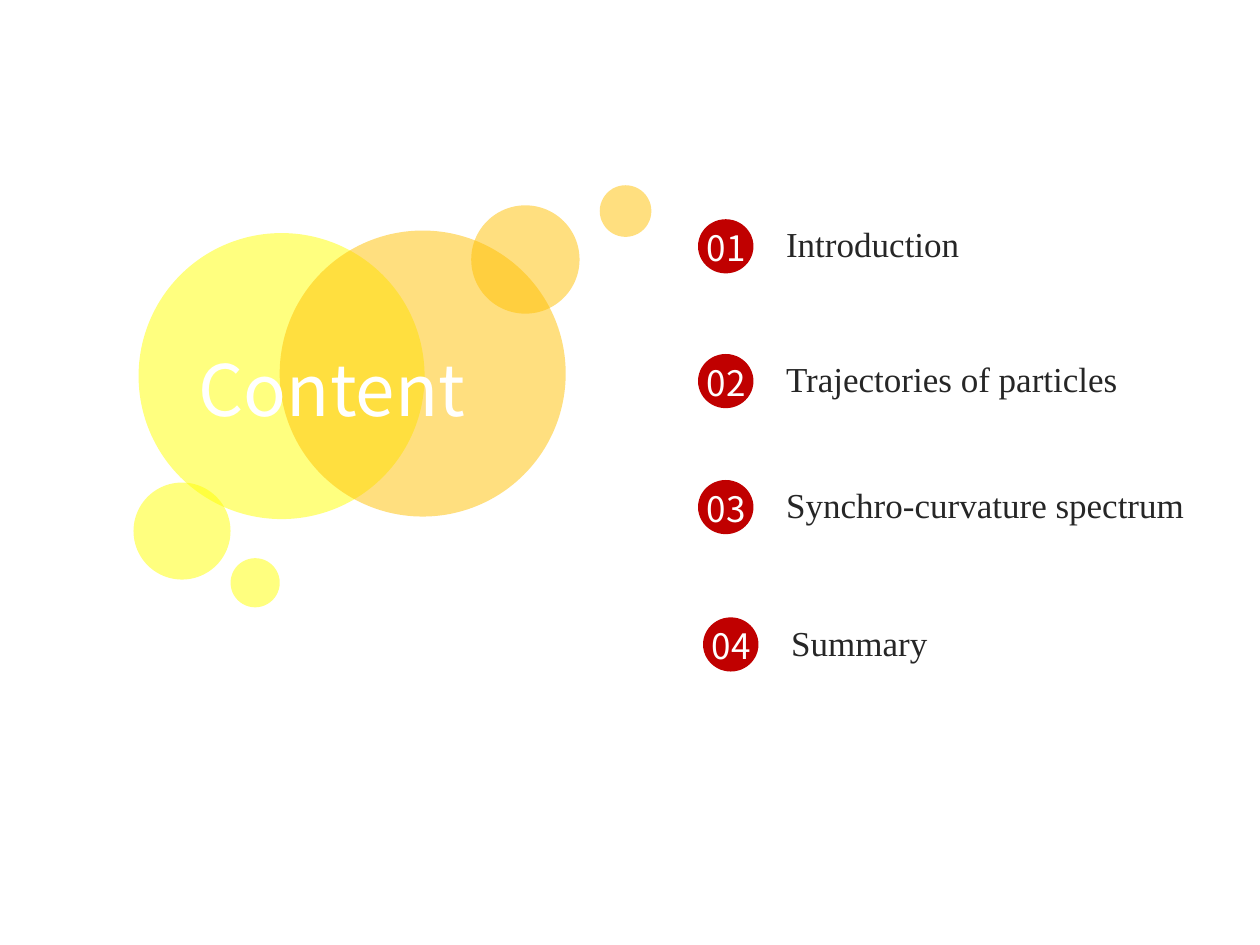
from dataclasses import dataclass

from pptx import Presentation
from pptx.dml.color import RGBColor
from pptx.enum.shapes import MSO_SHAPE
from pptx.enum.text import MSO_AUTO_SIZE, PP_ALIGN
from pptx.oxml.ns import qn
from pptx.util import Inches, Pt
from lxml.etree import SubElement


@dataclass(frozen=True)
class Theme:
    yellow: str = "FFFF00"
    gold: str = "FFC000"
    red: str = "C00000"
    white: str = "FFFFFF"
    ink: str = "262626"
    sans: str = "Noto Sans CJK SC"
    serif: str = "Times New Roman"
    title: float = 40.5
    body: float = 20


THEME = Theme()
WIDTH, HEIGHT = Inches(10), Inches(7.5)
CELL = WIDTH / 100  # the slide is a grid of 100 columns by 75 rows


def span(*cells):
    return [round(CELL * n) for n in cells]


def add_disc(shapes, x, y, w, h, color, alpha=None):
    """Draw a borderless ellipse; alpha is its opacity in percent."""
    disc = shapes.add_shape(MSO_SHAPE.OVAL, *span(x, y, w, h))
    disc.shadow.inherit = False
    disc.line.fill.background()
    disc.fill.solid()
    disc.fill.fore_color.rgb = RGBColor.from_string(color)
    if alpha is not None:
        tint = disc.fill._xPr.find(qn("a:solidFill"))[0]
        SubElement(tint, qn("a:alpha"), val=str(alpha * 1000))


def add_label(shapes, x, y, w, h, text, color, face, size, align=None, wrap=False):
    frame = shapes.add_textbox(*span(x, y, w, h)).text_frame
    frame.word_wrap = wrap
    frame.auto_size = MSO_AUTO_SIZE.SHAPE_TO_FIT_TEXT
    line = frame.paragraphs[0]
    line.alignment = align
    run = line.add_run()
    run.text = text
    run.font.color.rgb = RGBColor.from_string(color)
    for key, value in {"name": face, "size": Pt(size)}.items():
        setattr(run.font, key, value)


def add_cloud(shapes, left, top):
    """Overlapping translucent bubbles with the title across them."""
    bubbles = [
        (2.3, 3.8, 22.7, THEME.yellow),
        (13.5, 3.6, 22.7, THEME.gold),
        (28.7, 1.6, 8.6, THEME.gold),
        (38.9, 0, 4.1, THEME.gold),
        (1.9, 23.6, 7.7, THEME.yellow),
        (9.6, 29.6, 3.9, THEME.yellow),
    ]
    for x, y, size, color in bubbles:
        add_disc(shapes, left + x, top + y, size, size, color, alpha=50)
    add_label(shapes, left, top + 12.2, 35.3, 7.8, "Content", THEME.white,
              THEME.sans, THEME.title, PP_ALIGN.CENTER, wrap=True)


def add_item(shapes, left, top, width, number, text):
    """One grouped entry: a numbered disc and its topic."""
    group = shapes.add_group_shape().shapes
    add_disc(group, left + 0.3, top + 0.2, 4.4, 4.3, THEME.red)
    add_label(group, left, top + 0.3, 5.3, 4.4, f"{number:02}",
              THEME.white, THEME.sans, THEME.body)
    add_label(group, left + 6.3, top, width, 4.4, text,
              THEME.ink, THEME.serif, THEME.body)


def add_agenda(shapes, left, top):
    topics = [
        (0, 0, 15.9, "Introduction"),
        (0, 10.7, 28.5, "Trajectories of particles"),
        (0, 20.7, 33.8, "Synchro-curvature spectrum"),
        (0.4, 31.6, 12.9, "Summary"),
    ]
    for number, (x, y, width, text) in enumerate(topics, 1):
        add_item(shapes, left + x, top + y, width, number, text)


def main():
    deck = Presentation()
    deck.slide_width, deck.slide_height = WIDTH, HEIGHT
    shapes = deck.slides.add_slide(deck.slide_layouts[6]).shapes
    add_cloud(shapes, 8.7, 14.7)
    add_agenda(shapes, 55.1, 17.2)
    deck.save("out.pptx")


if __name__ == "__main__":
    main()
